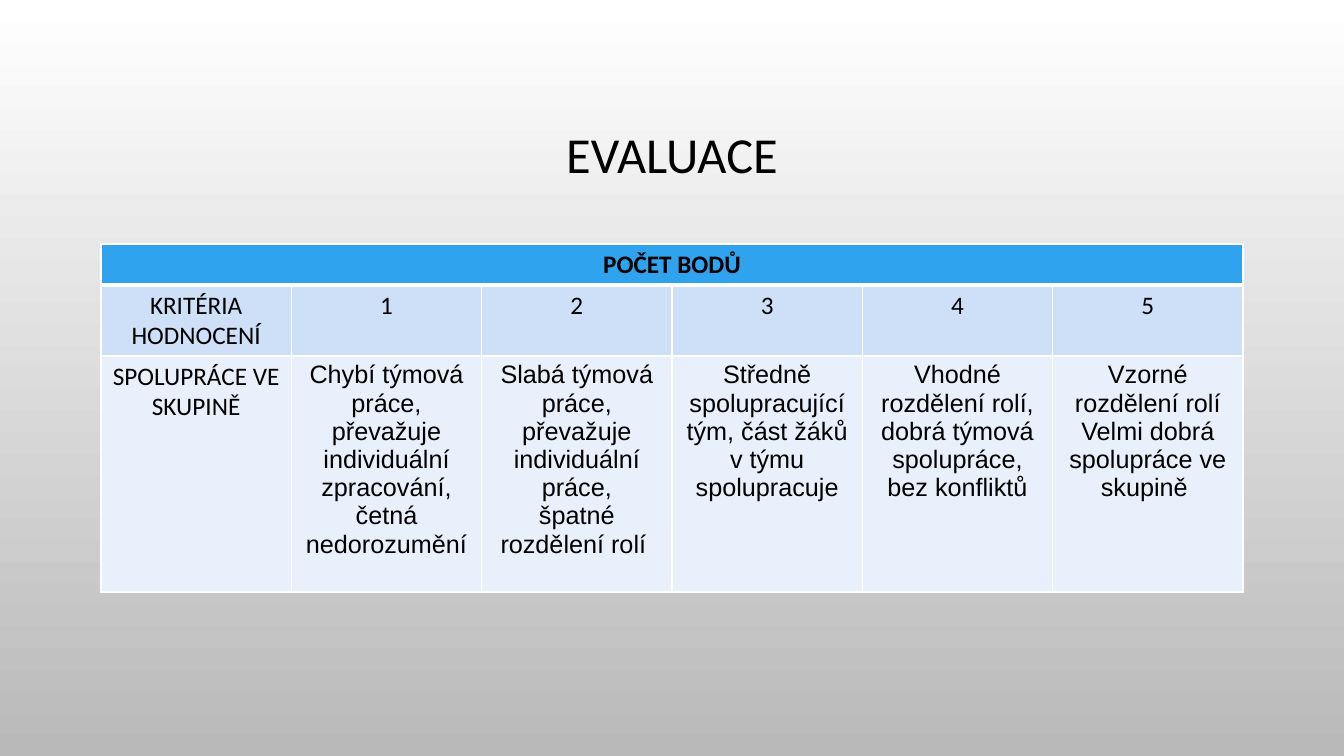
"""Build the evaluation slide: a title above a table of teamwork criteria."""
from pptx import Presentation
from pptx.dml.color import RGBColor
from pptx.enum.text import MSO_ANCHOR, PP_ALIGN
from pptx.oxml import parse_xml
from pptx.oxml.ns import nsdecls
from pptx.util import Emu, Pt

TITLE = "EVALUACE"
HEADER = "POČET BODŮ"
SCORES = ["KRITÉRIA HODNOCENÍ", "1", "2", "3", "4", "5"]
TEAMWORK = [
    "SPOLUPRÁCE VE SKUPINĚ",
    "Chybí týmová práce, převažuje individuální zpracování, četná nedorozumění",
    "Slabá týmová práce,\npřevažuje individuální práce,\nšpatné rozdělení rolí ",
    "Středně spolupracující tým, část žáků v týmu spolupracuje",
    "Vhodné rozdělení rolí, dobrá týmová spolupráce, bez konfliktů",
    "Vzorné rozdělení rolí\nVelmi dobrá spolupráce ve skupině ",
]
ROWS = [[HEADER] + [""] * (len(SCORES) - 1), SCORES, TEAMWORK]

BLACK = RGBColor(0x00, 0x00, 0x00)
WHITE = RGBColor(0xFF, 0xFF, 0xFF)
GREY = RGBColor(0xB9, 0xB9, 0xB9)
BLUE = RGBColor(0x2F, 0xA3, 0xEE)
LIGHT_BLUE = RGBColor(0xCD, 0xE0, 0xF8)
PALE_BLUE = RGBColor(0xE8, 0xF0, 0xFC)
ROW_FILLS = [BLUE, LIGHT_BLUE, PALE_BLUE]

SLIDE_SIZE = (1344, 756)
TITLE_BOX = (101, 69, 1142, 176)
TABLE_LEFT, TABLE_TOP, TABLE_WIDTH = 101, 244, 1142
ROW_HEIGHTS = [41, 71, 236]
TITLE_FONT = {"name": "Calibri", "size": Pt(36)}
LABEL_FONT = {"name": "Calibri", "size": Pt(18), "bold": False}
HEADER_FONT = {**LABEL_FONT, "bold": True}
DESCRIPTION_FONT = {**LABEL_FONT, "name": "Arial"}


def px(length):
    return Emu(round(length * 914400 / 100.8))


def write(frame, text, font_format):
    frame.text = text
    for paragraph in frame.paragraphs:
        paragraph.alignment = PP_ALIGN.CENTER
        paragraph.font.color.rgb = BLACK
        for attribute, value in font_format.items():
            setattr(paragraph.font, attribute, value)


def add_borders(cell, top, bottom):
    widths = {"lnL": 1, "lnR": 1, "lnT": top, "lnB": bottom}
    properties = cell._tc.get_or_add_tcPr()
    for position, (side, width) in enumerate(widths.items()):
        properties.insert(position, parse_xml(
            f'<a:{side} {nsdecls("a")} w="{Pt(width)}"><a:solidFill>'
            f'<a:srgbClr val="{WHITE}"/></a:solidFill></a:{side}>'))


def add_background(slide):
    fill = slide.background.fill
    fill.gradient()
    fill.gradient_angle = 270
    for stop, position, color in zip(fill.gradient_stops, (0, 1), (WHITE, GREY)):
        stop.position = position
        stop.color.rgb = color


def add_title(slide):
    frame = slide.shapes.add_textbox(*map(px, TITLE_BOX)).text_frame
    frame.word_wrap = True
    frame.vertical_anchor = MSO_ANCHOR.MIDDLE
    write(frame, TITLE, TITLE_FONT)
    frame.paragraphs[0].line_spacing = 0.9


def add_criteria(slide):
    bounds = (TABLE_LEFT, TABLE_TOP, TABLE_WIDTH, sum(ROW_HEIGHTS))
    criteria = slide.shapes.add_table(len(ROWS), len(SCORES), *map(px, bounds)).table
    criteria.first_row = criteria.horz_banding = False
    for column in criteria.columns:
        column.width = px(TABLE_WIDTH / len(SCORES))
    criteria.cell(0, 0).merge(criteria.cell(0, len(SCORES) - 1))
    for r, texts in enumerate(ROWS):
        criteria.rows[r].height = px(ROW_HEIGHTS[r])
        for c, text in enumerate(texts):
            cell = criteria.cell(r, c)
            cell.fill.solid()
            cell.fill.fore_color.rgb = ROW_FILLS[r]
            add_borders(cell, 3 if r == 1 else 1, 3 if r == 0 else 1)
            if text:
                body_font = DESCRIPTION_FONT if r == 2 and c else LABEL_FONT
                write(cell.text_frame, text, HEADER_FONT if r == 0 else body_font)


def main():
    deck = Presentation()
    deck.slide_width, deck.slide_height = map(px, SLIDE_SIZE)
    slide = deck.slides.add_slide(deck.slide_layouts[6])
    add_background(slide)
    add_title(slide)
    add_criteria(slide)
    deck.save("out.pptx")


if __name__ == "__main__":
    main()
